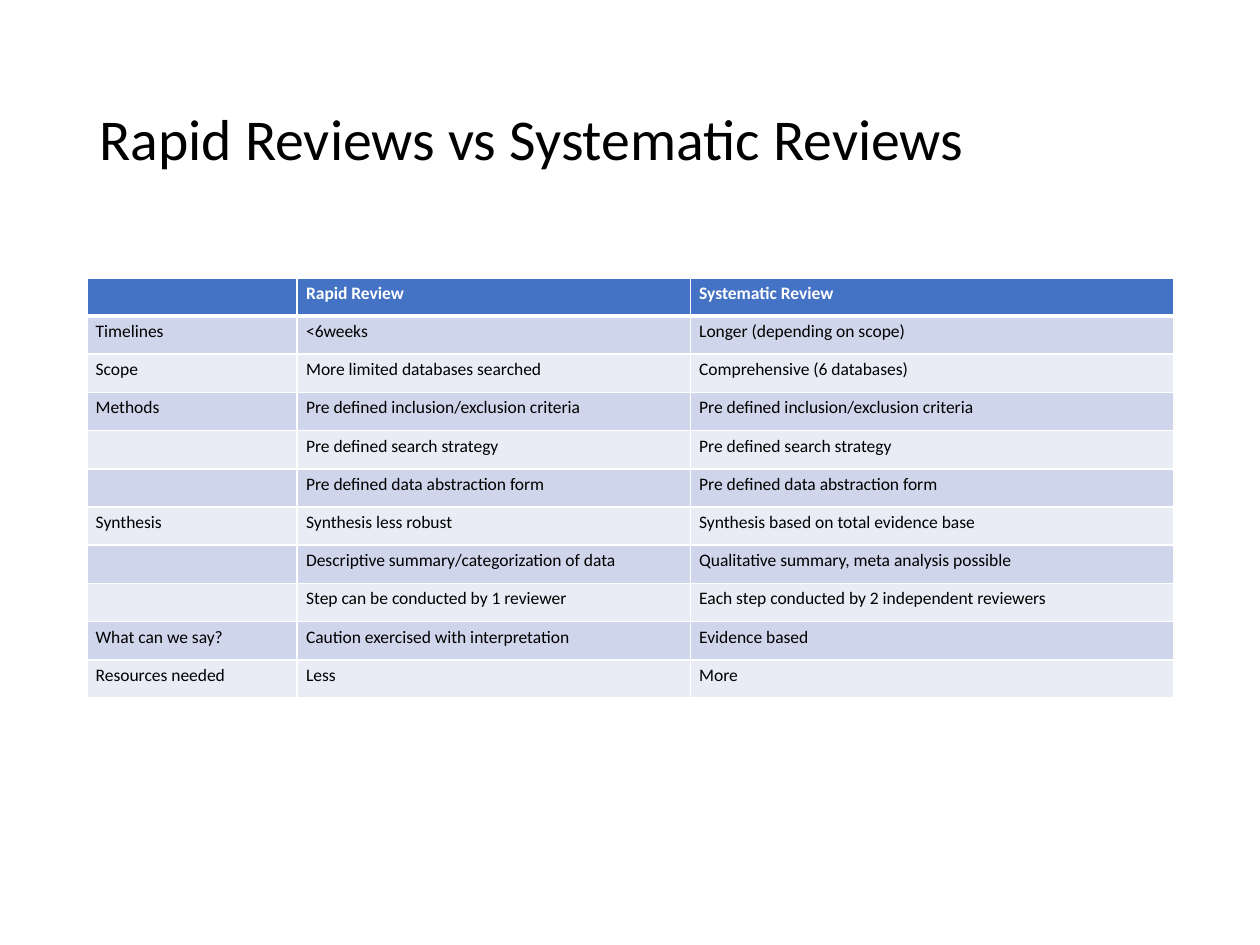
import dataclasses

import lxml.etree
import pptx
import pptx.dml.color
import pptx.enum.text
import pptx.oxml.ns
import pptx.util

Cm = pptx.util.Cm
Pt = pptx.util.Pt
qn = pptx.oxml.ns.qn


@dataclasses.dataclass(frozen=True)
class Theme:
    """Fonts, type sizes, line widths and colours of the slide."""
    font: str = "Calibri"
    title_size: int = 33
    table_size: int = 10
    rule: int = 1
    header_rule: int = 3
    text: str = "000000"
    light: str = "FFFFFF"
    header: str = "4472C4"
    bands: tuple = ("CFD5EA", "E9EBF5")


@dataclasses.dataclass(frozen=True)
class Box:
    """A region of the slide in centimetres."""
    left: float
    top: float
    width: float
    height: float


THEME = Theme()
TITLE_BOX = Box(1.75, 1.02, 21.9, 3.68)
TABLE_BOX = Box(1.75, 5.6, 21.92, 8.47)
COLUMN_SHARES = (1.67, 3.12, 3.84)
ROWS = (
    ("", "Rapid Review", "Systematic Review"),
    ("Timelines", "<6weeks", "Longer (depending on scope)"),
    ("Scope", "More limited databases searched", "Comprehensive (6 databases)"),
    ("Methods", *["Pre defined inclusion/exclusion criteria"] * 2),
    ("", *["Pre defined search strategy"] * 2),
    ("", *["Pre defined data abstraction form"] * 2),
    ("Synthesis", "Synthesis less robust", "Synthesis based on total evidence base"),
    ("", "Descriptive summary/categorization of data",
     "Qualitative summary, meta analysis possible"),
    ("", "Step can be conducted by 1 reviewer",
     "Each step conducted by 2 independent reviewers"),
    ("What can we say?", "Caution exercised with interpretation", "Evidence based"),
    ("Resources needed", "Less", "More"),
)


def rgb(value):
    """Return a colour object for a hex value."""
    return pptx.dml.color.RGBColor.from_string(value)


def set_attrs(obj, formats):
    """Set every attribute named in a dict of format values."""
    for name, value in formats.items():
        setattr(obj, name, value)


def add_text(p, text, size, color, bold=False):
    """Write one formatted run, or size the paragraph when it is empty."""
    if not text:
        lxml.etree.SubElement(p._p, qn("a:endParaRPr"), sz=str(size * 100))
        return
    r = p.add_run()
    r.text = text
    set_attrs(r.font, {"name": THEME.font, "size": Pt(size), "bold": bold})
    r.font.color.rgb = rgb(color)


def add_border(cell, side, width):
    """Draw one light border on a cell."""
    tc_pr = cell._tc.get_or_add_tcPr()
    ln = lxml.etree.SubElement(tc_pr, qn(f"a:ln{side}"), w=str(Pt(width)))
    fill = lxml.etree.SubElement(ln, qn("a:solidFill"))
    lxml.etree.SubElement(fill, qn("a:srgbClr"), val=THEME.light)


def format_cell(cell, text, row):
    """Fill, border and write one table cell according to its row."""
    header = row == 0
    thick = {"T": row == 1, "B": header}
    for side in "LRTB":
        add_border(cell, side, THEME.header_rule if thick.get(side) else THEME.rule)
    cell.fill.solid()
    cell.fill.fore_color.rgb = rgb(THEME.header if header else THEME.bands[(row - 1) % 2])
    set_attrs(cell, {"margin_left": Cm(0.18), "margin_right": Cm(0.18),
                     "margin_top": Cm(0.1), "margin_bottom": Cm(0.1)})
    add_text(cell.text_frame.paragraphs[0], text, THEME.table_size,
             THEME.light if header else THEME.text, header)


def place_title(s, box, text):
    """Move the title placeholder into the box and write the title."""
    sp = s.shapes.title
    set_attrs(sp, {name: Cm(value) for name, value in dataclasses.asdict(box).items()})
    tf = sp.text_frame
    set_attrs(tf, {"word_wrap": True,
                   "auto_size": pptx.enum.text.MSO_AUTO_SIZE.NONE,
                   "vertical_anchor": pptx.enum.text.MSO_ANCHOR.MIDDLE})
    p = tf.paragraphs[0]
    set_attrs(p, {"alignment": pptx.enum.text.PP_ALIGN.LEFT, "line_spacing": 0.9})
    add_text(p, text, THEME.title_size, THEME.text)


def place_comparison(s, box, rows):
    """Build the comparison table inside the box."""
    table = s.shapes.add_table(len(rows), len(COLUMN_SHARES), Cm(box.left), Cm(box.top),
                               Cm(box.width), Cm(box.height)).table
    for column, share in zip(table.columns, COLUMN_SHARES):
        column.width = Cm(box.width * share / sum(COLUMN_SHARES))
    for i, texts in enumerate(rows):
        table.rows[i].height = Cm(box.height / len(rows))
        for j, text in enumerate(texts):
            format_cell(table.cell(i, j), text, i)


def main():
    """Build and save the presentation."""
    prs = pptx.Presentation()
    set_attrs(prs, {"slide_width": Cm(25.4), "slide_height": Cm(19.05)})
    s = prs.slides.add_slide(prs.slide_layouts[5])
    place_title(s, TITLE_BOX, "Rapid Reviews vs Systematic Reviews")
    place_comparison(s, TABLE_BOX, ROWS)
    prs.save("out.pptx")


if __name__ == "__main__":
    main()
